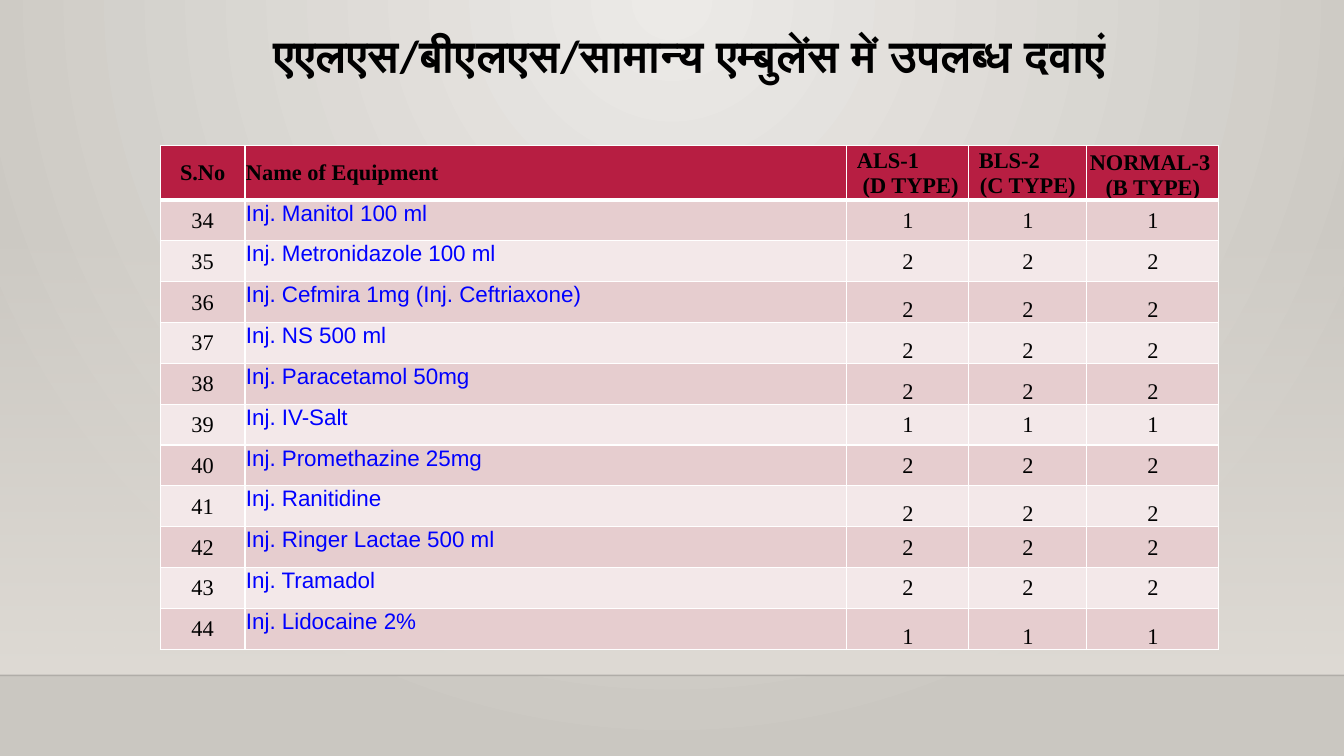
from dataclasses import dataclass

from pptx import Presentation
from pptx.dml.color import RGBColor
from pptx.enum.shapes import MSO_CONNECTOR, MSO_SHAPE
from pptx.enum.text import MSO_ANCHOR as ANCHOR, PP_ALIGN as ALIGN
from pptx.oxml.ns import qn
from pptx.util import Inches, Pt
from lxml.etree import SubElement


@dataclass(frozen=True)
class Theme:
    black: str = "000000"
    white: str = "FFFFFF"
    header: str = "B71E42"
    bands: tuple = ("E6CDCF", "F3E8E9")
    medicine: str = "0000FF"
    wall: tuple = ("ECEAE7", "CAC7C1")
    haze: str = "DFDBD5"
    title_font: str = "Calibri"
    table_font: str = "Times New Roman"
    medicine_font: str = "Arial"
    title_size: int = 32
    table_size: int = 16


T = Theme()
WIDTH, HEIGHT, FLOOR_TOP = 13.33, 7.5, 6.7
COLUMNS = (0.84, 5.97, 1.21, 1.17, 1.31)
HEADER_HEIGHT, TABLE_HEIGHT = 0.5, 4.96
FIRST_NUMBER = 34
MID, LOW = ANCHOR.MIDDLE, ANCHOR.BOTTOM

# Medicine, quantity in every ambulance type, anchor of the quantities
MEDICINES = (
    ("Inj. Manitol 100 ml", 1, MID),
    ("Inj. Metronidazole 100 ml", 2, MID),
    ("Inj. Cefmira 1mg (Inj. Ceftriaxone)", 2, LOW),
    ("Inj. NS 500 ml", 2, LOW),
    ("Inj. Paracetamol 50mg", 2, LOW),
    ("Inj. IV-Salt", 1, MID),
    ("Inj. Promethazine 25mg", 2, MID),
    ("Inj. Ranitidine", 2, LOW),
    ("Inj. Ringer Lactae 500 ml", 2, MID),
    ("Inj. Tramadol", 2, MID),
    ("Inj. Lidocaine 2%", 1, LOW),
)


def write(p, text, font=T.table_font, size=T.table_size, color=T.black,
          bold=False, align=ALIGN.CENTER, indent=0):
    p.alignment = align
    if indent:
        p._p.get_or_add_pPr().set("marL", str(Inches(indent)))
    r = p.add_run()
    r.text = text
    r.font.name, r.font.size, r.font.bold = font, Pt(size), bold
    r.font.color.rgb = RGBColor.from_string(color)


def set_gradient(fill, colors):
    fill.gradient()
    for stop, color in zip(fill.gradient_stops, colors):
        stop.color.rgb = RGBColor.from_string(color)


def set_alpha(color_element, percent):
    SubElement(color_element, qn("a:alpha")).set("val", str(percent * 1000))


def add_backdrop(s):
    """Radial wall glow, a haze that fades in downwards, and the floor line."""
    set_gradient(s.background.fill, T.wall)
    grad = next(s.element.iter(qn("a:gradFill")))
    grad.remove(grad.find(qn("a:lin")))
    glow = SubElement(grad, qn("a:path"))
    glow.set("path", "circle")
    focus = SubElement(glow, qn("a:fillToRect"))
    for side, percent in zip("ltrb", (43, 0, 43, 100)):
        focus.set(side, str(percent * 1000))

    haze = s.shapes.add_shape(MSO_SHAPE.RECTANGLE, 0, Inches(2.21),
                              Inches(WIDTH), Inches(FLOOR_TOP - 2.21))
    haze.shadow.inherit = False
    haze.line.fill.background()
    set_gradient(haze.fill, (T.haze, T.haze))
    haze.fill.gradient_angle = 270
    set_alpha(next(haze.element.iter(qn("a:srgbClr"))), 0)

    floor = s.shapes.add_connector(MSO_CONNECTOR.STRAIGHT, 0, Inches(FLOOR_TOP),
                                   Inches(WIDTH), Inches(FLOOR_TOP))
    floor.line.width = Pt(1)
    floor.line.color.rgb = RGBColor.from_string(T.black)
    set_alpha(next(floor.element.iter(qn("a:srgbClr"))), 20)
    SubElement(floor.element.spPr, qn("a:effectLst"))


def add_title(s, text):
    tf = s.shapes.add_textbox(Inches(1.59), Inches(0.29),
                              Inches(10.5), Inches(1.15)).text_frame
    tf.word_wrap = True
    p = tf.paragraphs[0]
    p.line_spacing = 0.9
    write(p, text, font=T.title_font, size=T.title_size, bold=True)


def style_cell(cell, fill, anchor, top=1, bottom=1):
    cell.margin_left = cell.margin_right = cell.margin_top = Inches(0.01)
    cell.margin_bottom = 0
    cell.vertical_anchor = anchor
    tc_pr = cell._tc.get_or_add_tcPr()
    for side, width in (("L", 1), ("R", 1), ("T", top), ("B", bottom)):
        ln = SubElement(tc_pr, qn(f"a:ln{side}"))
        ln.set("w", str(Pt(width)))
        solid = SubElement(ln, qn("a:solidFill"))
        SubElement(solid, qn("a:srgbClr")).set("val", T.white)
    cell.fill.solid()
    cell.fill.fore_color.rgb = RGBColor.from_string(fill)


def fill_header(table):
    left = {"align": ALIGN.LEFT}
    shifted = {"align": ALIGN.LEFT, "indent": 0.09}
    headings = (
        (MID, [("S.No", {})]),
        (MID, [("Name of Equipment", left)]),
        (MID, [("ALS-1", shifted), (" (D TYPE)", {})]),
        (MID, [("BLS-2", shifted), ("(C TYPE)", {})]),
        (LOW, [("NORMAL-3 ", {}), ("(B TYPE)", {})]),
    )
    for col, (anchor, lines) in enumerate(headings):
        cell = table.cell(0, col)
        style_cell(cell, T.header, anchor, bottom=3)
        tf = cell.text_frame
        for i, (text, layout) in enumerate(lines):
            p = tf.add_paragraph() if i else tf.paragraphs[0]
            write(p, text, bold=True, **layout)


def fill_medicines(table):
    name_format = {"font": T.medicine_font, "color": T.medicine,
                   "align": ALIGN.LEFT}
    for row, (name, quantity, anchor) in enumerate(MEDICINES, 1):
        entries = [(str(FIRST_NUMBER + row - 1), MID, {}),
                   (name, ANCHOR.TOP, name_format)]
        entries += [(str(quantity), anchor, {})] * 3
        for col, (text, cell_anchor, layout) in enumerate(entries):
            cell = table.cell(row, col)
            style_cell(cell, T.bands[(row - 1) % 2], cell_anchor,
                       top=3 if row == 1 else 1)
            write(cell.text_frame.paragraphs[0], text, **layout)


def add_medicine_table(s):
    table = s.shapes.add_table(len(MEDICINES) + 1, len(COLUMNS), Inches(1.59),
                               Inches(1.44), Inches(sum(COLUMNS)),
                               Inches(TABLE_HEIGHT)).table
    for column, width in zip(table.columns, COLUMNS):
        column.width = Inches(width)
    body_height = (TABLE_HEIGHT - HEADER_HEIGHT) / len(MEDICINES)
    for i, row in enumerate(table.rows):
        row.height = Inches(body_height if i else HEADER_HEIGHT)
    fill_header(table)
    fill_medicines(table)


def main():
    prs = Presentation()
    prs.slide_width, prs.slide_height = Inches(WIDTH), Inches(HEIGHT)
    s = prs.slides.add_slide(prs.slide_layouts[6])
    add_backdrop(s)
    add_title(s, "एएलएस/बीएलएस/सामान्य एम्बुलेंस में उपलब्ध दवाएं")
    add_medicine_table(s)
    prs.save("out.pptx")


if __name__ == "__main__":
    main()
